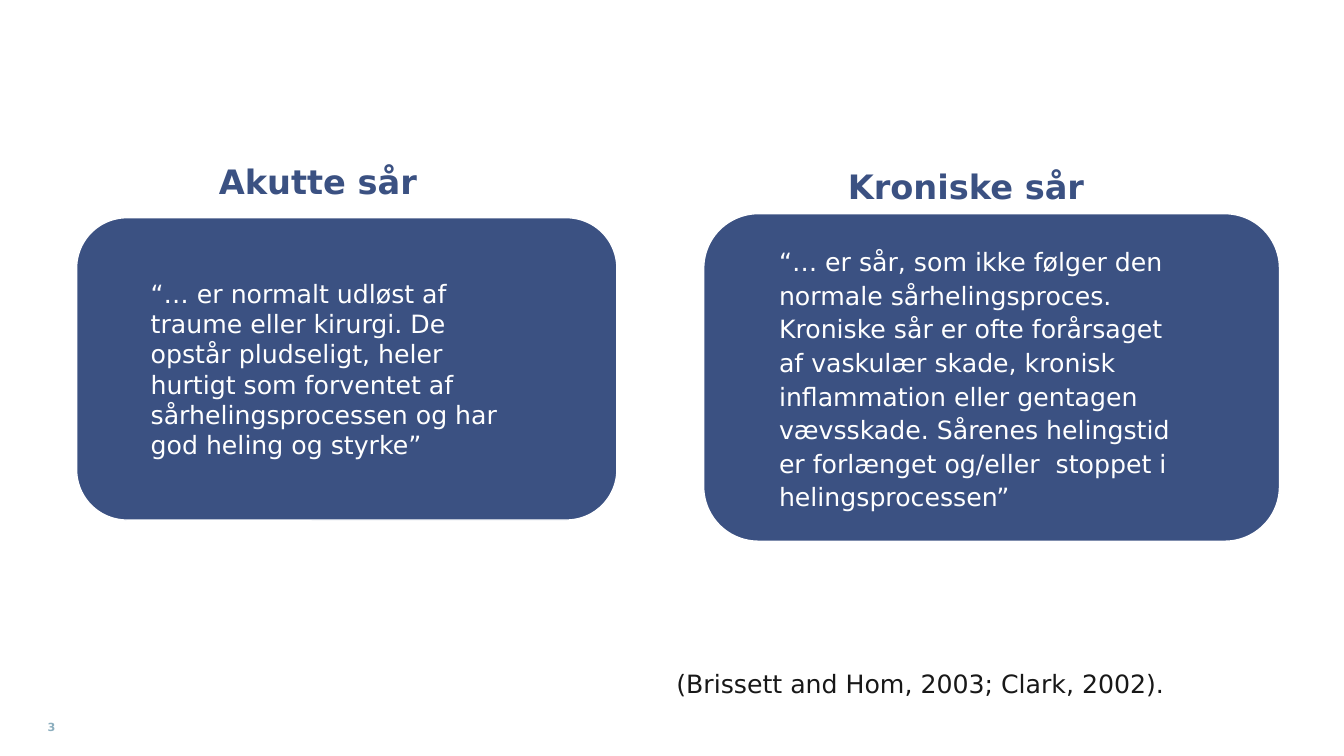
from pptx import Presentation
from pptx.dml.color import RGBColor
from pptx.enum.shapes import MSO_SHAPE
from pptx.enum.text import MSO_ANCHOR, PP_ALIGN
from pptx.util import Inches, Pt

ROUND = MSO_SHAPE.ROUNDED_RECTANGLE
TOP, MIDDLE, BOTTOM = MSO_ANCHOR.TOP, MSO_ANCHOR.MIDDLE, MSO_ANCHOR.BOTTOM
LEFT, RIGHT = PP_ALIGN.LEFT, PP_ALIGN.RIGHT
NAVY = RGBColor(0x3B, 0x51, 0x82)
WHITE = RGBColor(0xFF, 0xFF, 0xFF)
DARK = RGBColor(0x18, 0x18, 0x18)
TEAL = RGBColor(0x8C, 0xAE, 0xBE)
FONT = "DejaVu Sans"
WIDE, HIGH = 13.33, 7.5
INDENT, MARGIN = 0.49, 0.7

CARDS = [
    ("“… er normalt udløst af traume eller kirurgi. De opstår pludseligt, "
     "heler hurtigt som forventet af sårhelingsprocessen og har god heling "
     "og styrke”", (0.057, 0.288, 0.402, 0.4), None),
    ("“… er sår, som ikke følger den normale sårhelingsproces. Kroniske sår "
     "er ofte forårsaget af vaskulær skade, kronisk inflammation eller "
     "gentagen vævsskade. Sårenes helingstid er forlænget og/eller  stoppet i "
     "helingsprocessen”", (0.5236, 0.2827, 0.4284, 0.4333), Pt(24)),
]
HEAD = dict(size=24, color=NAVY, bold=True)
LABELS = [
    ("Akutte sår", (0.1628, 0.1093, 0.345, 0.1573),
     dict(HEAD, anchor=BOTTOM, inset=0, space=0.9)),
    ("Kroniske sår", (0.6234, 0.2133, 0.36, 0.0667), HEAD),
    ("(Brissett and Hom, 2003; Clark, 2002).", (0.4591, 0.8773, 0.4284, 0.0533),
     dict(size=18, color=DARK, indent=INDENT)),
    ("3", (0.012, 0.9533, 0.0293, 0.0467),
     dict(size=8, color=TEAL, bold=True, align=RIGHT, inset=0)),
]


def place(box):
    return [Inches(share * side) for share, side in zip(box, (WIDE, HIGH) * 2)]


def write(shape, text, size=18, color=WHITE, bold=False, align=LEFT,
          anchor=TOP, inset=None, indent=0, margin=0, space=None):
    frame = shape.text_frame
    frame.word_wrap = True
    frame.vertical_anchor = anchor
    if inset is not None:
        frame.margin_left = frame.margin_right = Inches(inset)
        frame.margin_top = frame.margin_bottom = Inches(inset)
    para = frame.paragraphs[0]
    para.alignment = align
    para.line_spacing = space
    props = para._p.get_or_add_pPr()
    props.set("marL", str(Inches(indent)))
    props.set("marR", str(Inches(margin)))
    props.set("indent", "0")
    run = para.add_run()
    run.text = text
    font = run.font
    font.name, font.size, font.bold = FONT, Pt(size), bold
    font.color.rgb = color


deck = Presentation()
deck.slide_width, deck.slide_height = Inches(WIDE), Inches(HIGH)
slide = deck.slides.add_slide(deck.slide_layouts[6])

for text, box, space in CARDS:
    card = slide.shapes.add_shape(ROUND, *place(box))
    card.shadow.inherit = False
    card.fill.solid()
    card.fill.fore_color.rgb = NAVY
    card.line.color.rgb = WHITE
    card.line.width = Pt(1)
    write(card, text, anchor=MIDDLE, indent=INDENT, margin=MARGIN, space=space)

for text, box, style in LABELS:
    write(slide.shapes.add_textbox(*place(box)), text, **style)

deck.save("out.pptx")
